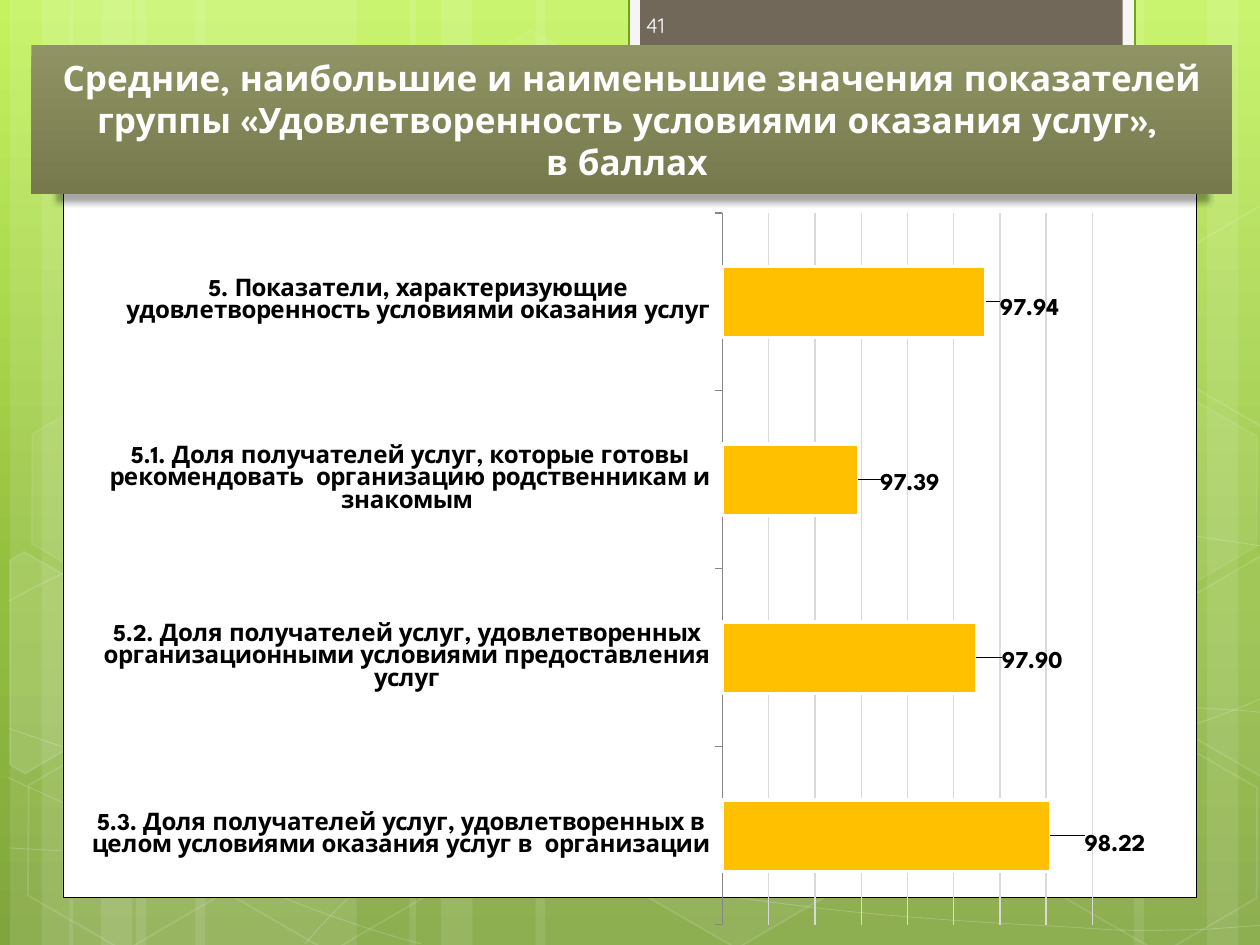
from dataclasses import dataclass

from lxml.etree import SubElement
from pptx import Presentation
from pptx.chart.data import CategoryChartData
from pptx.dml.color import RGBColor
from pptx.enum.chart import XL_CHART_TYPE as ChartType
from pptx.enum.chart import XL_LABEL_POSITION as LabelPos
from pptx.enum.chart import XL_TICK_MARK as Tick
from pptx.enum.shapes import MSO_SHAPE as Shape
from pptx.enum.text import MSO_ANCHOR as Anchor
from pptx.enum.text import PP_ALIGN as Align
from pptx.oxml import parse_xml
from pptx.oxml.ns import nsdecls, qn
from pptx.util import Inches, Pt


@dataclass(frozen=True)
class Theme:
    """Colours, fonts and type sizes of the slide."""
    white: str = "FFFFFF"
    black: str = "000000"
    frame: str = "F5F5F5"
    frame_line: str = "74A510"
    tab: str = "71685A"
    number: str = "FEFEFE"
    bar: str = "FFC000"
    grid: str = "D9D9D9"
    axis: str = "868686"
    backdrop: tuple = ((0, "C3F35F"), (62, "93BF3F"), (100, "81A53E"))
    banner: tuple = ((0, "909465"), (100, "75794C"))
    text_font: str = "Quicksand"
    chart_font: str = "League Spartan"
    title_size: float = 20
    chart_size: float = 13.8
    number_size: float = 12


T = Theme()

STRIPES = [(1.08, 1.75), (0.08, 0.5), (0.33, 0.83), (1.55, 1.75), (0.55, 0.5), (0.8, 0.83),
           (7.33, 1.75), (9.58, 0.5), (9, 0.83), (4.25, 3.08), (3.25, 0.5), (3.5, 0.83)]

CURVES = [
    [(0.07, 6.73), (0.61, 6.76), (1.15, 6.79), (1.9, 6.78), (2.65, 6.77), (3.58, 6.75), (4.58, 6.65),
     (5.58, 6.55), (7, 6.36), (7.92, 6.17), (8.83, 5.98), (9.77, 5.68), (10.07, 5.51)],
    [(0.07, 4.77), (0.36, 4.61), (0.65, 4.46), (1.21, 4.31), (1.78, 4.16), (2.59, 3.94), (3.47, 3.87),
     (4.36, 3.8), (5.44, 3.79), (6.54, 3.87), (7.64, 3.95), (9.47, 4.26), (10.07, 4.34)],
    [(0.06, 6.17), (1.27, 6.72), (2.47, 7.27), (3.34, 7.49)],
    [(0.07, 5.78), (0.38, 5.89), (0.7, 6), (1.28, 6.16), (1.86, 6.31), (2.73, 6.56), (3.57, 6.73),
     (4.4, 6.9), (5.45, 7.08), (6.28, 7.18), (7.11, 7.29), (8, 7.33), (8.53, 7.36),
     (9.05, 7.4), (9.19, 7.38), (9.45, 7.38), (9.71, 7.37), (9.89, 7.35), (10.07, 7.34)],
    [(2.42, 7.49), (2.6, 7.29), (2.78, 7.09), (3.02, 6.91), (3.26, 6.73), (3.6, 6.53), (3.88, 6.39),
     (4.16, 6.25), (4.33, 6.19), (4.7, 6.09), (5.06, 5.99), (5.73, 5.85), (6.08, 5.78),
     (6.44, 5.71), (6.49, 5.71), (6.8, 5.69), (7.11, 5.66), (7.6, 5.63), (7.94, 5.62),
     (8.29, 5.61), (8.86, 5.62), (8.86, 5.62), (8.86, 5.62), (9.53, 5.62), (9.53, 5.62),
     (9.71, 5.63), (9.88, 5.64), (9.97, 5.65), (10.06, 5.66), (10.03, 5.65), (10.06, 5.66)],
]

HEXAGONS = [(3.34, 0.36, 4, 8), (4.97, 5.89, 6, 12), (0.11, 5.91, 0, 12), (0.14, 3.12, 7, 8),
            (1.74, 5.92, 0, 12), (7.53, 4.53, 10, 12), (8.34, 5.93, 0, 12), (8.34, 3.14, 7, 8)]

CUT_HEXAGONS = [
    ([(0.08, 4.45), (0.19, 4.38), (0.96, 4.82), (0.95, 5.7), (0.2, 6.14), (0.08, 6.07)], 10),
    ([(9.26, 4.85), (10.01, 4.41), (10.09, 4.46), (10.09, 6.13), (10.02, 6.17), (9.26, 5.73)], 4),
    ([(9.26, 2.07), (10.01, 1.63), (10.1, 1.68), (10.09, 3.35), (10.02, 3.39), (9.26, 2.95)], 0),
]

TITLE = ["Средние, наибольшие и наименьшие значения показателей группы "
         "«Удовлетворенность условиями оказания услуг», ", "в баллах "]

INDICATORS = [
    ("5. Показатели, характеризующие удовлетворенность условиями оказания услуг", 97.94),
    ("5.1. Доля получателей услуг, которые готовы рекомендовать  организацию родственникам и знакомым ", 97.39),
    ("5.2. Доля получателей услуг, удовлетворенных организационными условиями предоставления услуг", 97.9),
    ("5.3. Доля получателей услуг, удовлетворенных в целом условиями оказания услуг в  организации", 98.22),
]
LABEL_SHIFTS = [(0.07, 0.06), (0.13, 0.04), (0.16, 0.04), (0.23, 0.08)]
PLOT_BOX = (5.23, 0.12, 2.94, 5.65)


def rgb(color):
    """Turn a hex string into a colour."""
    return RGBColor.from_string(color)


def paint(sp, fill=None, line=None, width=1.0, fill_alpha=100, line_alpha=100):
    """Set fill and outline, with opacity in percent, and drop the shadow."""
    sp.shadow.inherit = False
    for part, color, alpha in ((sp.fill, fill, fill_alpha), (sp.line.fill, line, line_alpha)):
        if not color or not alpha:
            part.background()
            continue
        part.solid()
        part.fore_color.rgb = rgb(color)
        if alpha < 100:
            clr = part._xPr.find(".//" + qn("a:solidFill"))[0]
            SubElement(clr, qn("a:alpha"), val=str(alpha * 1000))
    if line:
        sp.line.width = Pt(width)


def add_box(s, box, kind=Shape.RECTANGLE, **style):
    """Add a painted preset shape in a box given in inches."""
    sp = s.shapes.add_shape(kind, *map(Inches, box))
    paint(sp, **style)
    return sp


def add_outline(s, points, close, **style):
    """Add a painted freeform through points given in inches."""
    scaled = [(Inches(x), Inches(y)) for x, y in points]
    builder = s.shapes.build_freeform(*scaled[0])
    builder.add_line_segments(scaled[1:], close=close)
    sp = builder.convert_to_shape()
    paint(sp, **style)
    return sp


def add_curve(s, points, **style):
    """Add a chain of cubic curves by joining each three segments into one."""
    sp = add_outline(s, points, False, **style)
    segments = list(sp._element.iter(qn("a:lnTo")))
    outline = segments[0].getparent()
    for i in range(0, len(segments), 3):
        cubic = SubElement(outline, qn("a:cubicBezTo"))
        for segment in segments[i:i + 3]:
            cubic.append(segment[0])
            outline.remove(segment)


def set_gradient(fill, stops):
    """Give a fill a vertical gradient with the given stops."""
    fill.gradient()
    fill.gradient_angle = 270
    gs_list = fill._xPr.find(".//" + qn("a:gsLst"))
    for gs in list(gs_list):
        gs_list.remove(gs)
    for pos, color in stops:
        gs = SubElement(gs_list, qn("a:gs"), pos=str(pos * 1000))
        SubElement(gs, qn("a:srgbClr"), val=color)


def style_font(font, name, size, color, bold=False):
    """Set typeface, size, colour and weight."""
    font.name, font.size, font.bold = name, Pt(size), bold
    font.color.rgb = rgb(color)


def add_backdrop(s, height):
    """Draw the gradient, stripes, curves and hexagons behind the content."""
    set_gradient(s.background.fill, T.backdrop)
    for left, width in STRIPES:
        add_box(s, (left, 0, width, height), fill=T.white, fill_alpha=10)
    for curve in CURVES:
        add_curve(s, curve, line=T.white, width=0.5, line_alpha=20)
    for left, top, fill_alpha, line_alpha in HEXAGONS:
        sp = add_box(s, (left, top, 1.75, 1.52), Shape.HEXAGON, fill=T.white,
                     fill_alpha=fill_alpha, line=T.white, line_alpha=line_alpha)
        sp.adjustments[0] = 0.285
        sp.rotation = 30
    for points, fill_alpha in CUT_HEXAGONS:
        add_outline(s, points, True, fill=T.white, fill_alpha=fill_alpha, line=T.white, line_alpha=12)


def add_number_tab(s, left, top, width, height):
    """Draw the framed tab with the slide number."""
    add_box(s, (left, top, width, height), fill=T.frame, line=T.frame_line, width=1.25)
    add_box(s, (left + 0.09, top, width - 0.19, height - 0.08), fill=T.tab)
    tf = s.shapes.add_textbox(*map(Inches, (left + 0.04, 0, 1.46, 0.4))).text_frame
    tf.word_wrap, tf.vertical_anchor = True, Anchor.MIDDLE
    tf.text = "41"
    style_font(tf.paragraphs[0].runs[0].font, T.text_font, T.number_size, T.number)


def add_title(s, *box):
    """Draw the title banner with its soft shadow."""
    sp = add_box(s, box)
    set_gradient(sp.fill, T.banner)
    sp._element.spPr.find(qn("a:effectLst")).append(parse_xml(
        f'<a:outerShdw {nsdecls("a")} blurRad="44450" dist="50800" dir="5400000" sx="96000" '
        f'algn="b" rotWithShape="0"><a:srgbClr val="{T.black}"><a:alpha val="34000"/>'
        '</a:srgbClr></a:outerShdw>'))
    tf = sp.text_frame
    tf.word_wrap, tf.vertical_anchor = True, Anchor.MIDDLE
    tf.text = "\n".join(TITLE)
    for p in tf.paragraphs:
        p.alignment = Align.CENTER
        style_font(p.runs[0].font, T.text_font, T.title_size, T.white, True)


def make_layout(inches, width, height, inner=False):
    """Build a manual chart layout from lengths in a chart of the given size."""
    target = '<c:layoutTarget val="inner"/><c:xMode val="edge"/><c:yMode val="edge"/>' if inner else ""
    items = "".join(f'<c:{key} val="{part / whole}"/>'
                    for key, part, whole in zip("xywh", inches, (width, height) * 2))
    return parse_xml(f'<c:layout {nsdecls("c")}><c:manualLayout>{target}{items}</c:manualLayout></c:layout>')


def add_indicator_chart(s, left, top, width, height):
    """Draw the bar chart of average indicator values."""
    data = CategoryChartData(number_format="0.00")
    data.categories = [name for name, _ in INDICATORS]
    data.add_series("Series 1", [value for _, value in INDICATORS])
    box = map(Inches, (left, top, width, height))
    chart = s.shapes.add_chart(ChartType.BAR_CLUSTERED, *box, data).chart
    chart.has_legend = chart.has_title = False
    style_font(chart.font, T.chart_font, T.chart_size, T.black, True)

    cat, val = chart.category_axis, chart.value_axis
    cat.reverse_order = True
    cat.major_tick_mark = Tick.OUTSIDE
    cat.format.line.color.rgb = rgb(T.axis)
    val.visible = False
    val.minimum_scale, val.maximum_scale, val.major_unit = 96.8, 98.4, 0.2
    val.major_gridlines.format.line.color.rgb = rgb(T.grid)
    val.major_gridlines.format.line.width = Pt(0.75)

    plot = chart.plots[0]
    plot.gap_width, plot.vary_by_categories = 150, False
    series = plot.series[0]
    series.format.fill.solid()
    series.format.fill.fore_color.rgb = rgb(T.bar)
    series.format.line.color.rgb = rgb(T.white)
    series.format.line.width = Pt(2)
    labels = series.data_labels
    labels.show_value = True
    labels.number_format, labels.number_format_is_linked = "0.00", False
    for i, shift in enumerate(LABEL_SHIFTS):
        label = series.points[i].data_label
        style_font(label.font, T.chart_font, T.chart_size, T.black, True)
        label.position = LabelPos.OUTSIDE_END
        d_lbl = label._get_or_add_dLbl()
        d_lbl.insert(1, make_layout(shift, width, height))
        d_lbl.insert(2, parse_xml(f'<c:numFmt {nsdecls("c")} formatCode="0.00" sourceLinked="0"/>'))

    d_lbls = labels._element
    for old in d_lbls.findall(qn("c:showLeaderLines")):
        d_lbls.remove(old)
    d_lbls.append(parse_xml(
        f'<c:extLst {nsdecls("c")}><c:ext uri="{{CE6537A1-D6FC-4f65-9D91-7224C49458BB}}" '
        'xmlns:c15="http://schemas.microsoft.com/office/drawing/2012/chart">'
        '<c15:showLeaderLines val="0"/></c:ext></c:extLst>'))

    area = chart._chartSpace.chart.plotArea
    for old in area.findall(qn("c:layout")):
        area.remove(old)
    area.insert(0, make_layout(PLOT_BOX, width, height, inner=True))


def main():
    """Build the slide and save it."""
    prs = Presentation()
    prs.slide_width, prs.slide_height = Inches(10), Inches(7.5)
    s = prs.slides.add_slide(prs.slide_layouts[6])
    add_backdrop(s, 7.5)
    add_box(s, (0.5, 0.36, 9, 6.76), fill=T.white, line=T.black, width=0.5)
    add_number_tab(s, 4.99, -0.02, 4.02, 0.76)
    add_title(s, 0.25, 0.36, 9.53, 1.18)
    add_indicator_chart(s, 0.51, 1.57, 8.58, 5.88)
    prs.save("out.pptx")


if __name__ == "__main__":
    main()
